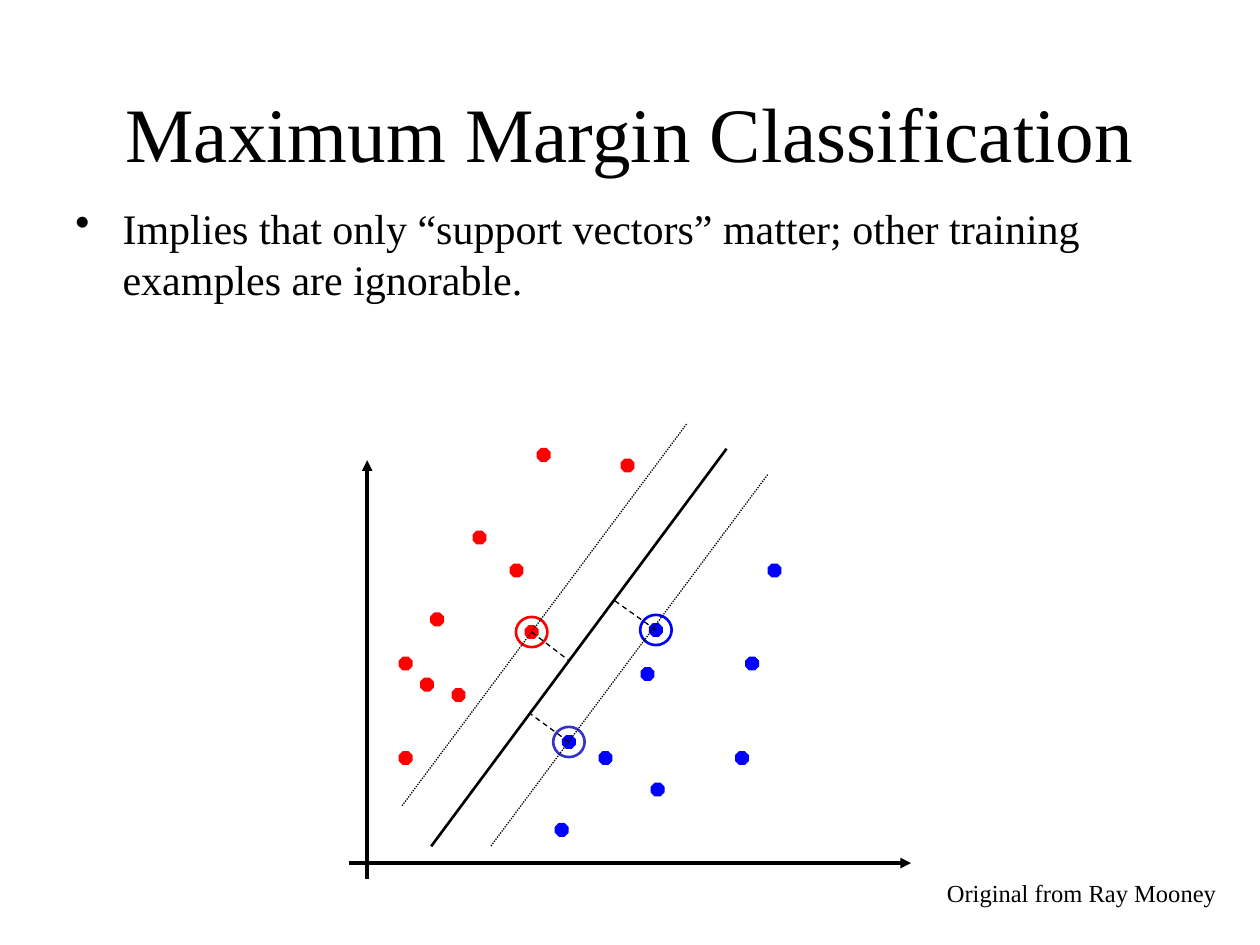
import pptx
import pptx.util
import pptx.dml.color
import pptx.enum.dml
import pptx.enum.shapes
import pptx.enum.text
import pptx.oxml
import pptx.oxml.ns
from lxml import etree

Pt = pptx.util.Pt
RGBColor = pptx.dml.color.RGBColor
Shape = pptx.enum.shapes.MSO_SHAPE
Dash = pptx.enum.dml.MSO_LINE
Align = pptx.enum.text.PP_ALIGN
Anchor = pptx.enum.text.MSO_ANCHOR

BLACK = RGBColor(0, 0, 0)
RED = RGBColor(255, 0, 0)
BLUE = RGBColor(0, 0, 255)
INDIGO = RGBColor(0x33, 0x33, 0xCC)
FONT = "Times New Roman"

TITLE = "Maximum Margin Classification"
BULLET = ("Implies that only “support vectors” matter; "
          "other training examples are ignorable.")
CREDIT = "Original from Ray Mooney"

RED_SUPPORT = (303.8, 361.2)
UPPER_BLUE_SUPPORT = (374.8, 360)
LOWER_BLUE_SUPPORT = (325.1, 424)
RED_POINTS = [
    (295.2, 326), (249.8, 354), (262, 397.2), (231.8, 433.2), (274, 307.2),
    (231.8, 379.2), (244, 391.2), (310.7, 260), (358.6, 266), RED_SUPPORT,
]
BLUE_POINTS = [
    (346, 433.2), (424, 433.2), (321, 474.2), (370, 385.2), (375.8, 451.2),
    (429.8, 379.2), (442.6, 326), UPPER_BLUE_SUPPORT, LOWER_BLUE_SUPPORT,
]
RINGS = [(RED_SUPPORT, RED), (LOWER_BLUE_SUPPORT, INDIGO),
         (UPPER_BLUE_SUPPORT, BLUE)]
DOT_SIZE = (7.2, 7.2)
RING_SIZE = (18, 17.3)

AXES = [((209.8, 502.4), (209.8, 263)), ((199.2, 493.2), (520.6, 493.2))]
SEPARATOR = ((246.4, 483.6), (415.2, 256.4))
MARGINS = [((280.6, 483.4), (439, 270.8)), ((229.8, 460.4), (392.4, 242.2))]
DISTANCES = [(UPPER_BLUE_SUPPORT, (351.2, 343.2)),
             (LOWER_BLUE_SUPPORT, (302.4, 407.4)),
             (RED_SUPPORT, (325, 377.4))]


def add_text(slide, box, text, size, align=Align.LEFT, wrap=True):
    shape = slide.shapes.add_textbox(*map(Pt, box))
    frame = shape.text_frame
    frame.word_wrap = wrap
    paragraph = frame.paragraphs[0]
    paragraph.alignment = align
    run = paragraph.add_run()
    run.text = text
    run.font.name = FONT
    run.font.size = Pt(size)
    run.font.color.rgb = BLACK
    return frame


def add_bullet(paragraph, indent):
    properties = paragraph._p.get_or_add_pPr()
    properties.set("marL", str(Pt(indent)))
    properties.set("indent", str(-Pt(indent)))
    bullet = etree.SubElement(properties, pptx.oxml.ns.qn("a:buChar"))
    bullet.set("char", "•")


def add_line(slide, ends, width, dash=None, arrow=False):
    start, end = ends
    line = slide.shapes.add_connector(
        pptx.enum.shapes.MSO_CONNECTOR.STRAIGHT, *map(Pt, start + end))
    line.line.color.rgb = BLACK
    line.line.width = Pt(width)
    if dash:
        line.line.dash_style = dash
    if arrow:
        head = etree.SubElement(line.line._get_or_add_ln(),
                                pptx.oxml.ns.qn("a:tailEnd"))
        head.set("type", "triangle")
    etree.SubElement(line._element.spPr, pptx.oxml.ns.qn("a:effectLst"))


def add_mark(slide, kind, center, size, color, width, filled):
    left, top = (middle - length / 2 for middle, length in zip(center, size))
    shape = slide.shapes.add_shape(kind, Pt(left), Pt(top), *map(Pt, size))
    shape.shadow.inherit = False
    shape.line.color.rgb = color
    shape.line.width = Pt(width)
    if filled:
        shape.fill.solid()
        shape.fill.fore_color.rgb = color
    else:
        shape.fill.background()


def main():
    presentation = pptx.Presentation()
    presentation.slide_width = Pt(720)
    presentation.slide_height = Pt(540)
    slide = presentation.slides.add_slide(presentation.slide_layouts[6])

    title = add_text(slide, (54, 30, 612, 90), TITLE, 44, Align.CENTER)
    title.vertical_anchor = Anchor.MIDDLE
    body = add_text(slide, (36, 112, 648, 396), BULLET, 24)
    paragraph = body.paragraphs[0]
    paragraph.space_before = Pt(4.8)
    paragraph.line_spacing = Pt(29)
    add_bullet(paragraph, 27)

    for axis in AXES:
        add_line(slide, axis, 2, arrow=True)
    for points, color in ((RED_POINTS, RED), (BLUE_POINTS, BLUE)):
        for point in points:
            add_mark(slide, Shape.OCTAGON, point, DOT_SIZE, color, 0.75, True)
    add_line(slide, SEPARATOR, 1.5)
    for center, color in RINGS:
        add_mark(slide, Shape.OVAL, center, RING_SIZE, color, 1.5, False)
    for distance in DISTANCES:
        add_line(slide, distance, 0.75, Dash.DASH)
    for margin in MARGINS:
        add_line(slide, margin, 0.75, Dash.ROUND_DOT)

    add_text(slide, (534, 498.4, 170, 24.5), CREDIT, 14, wrap=False)
    presentation.save("out.pptx")


if __name__ == "__main__":
    main()
